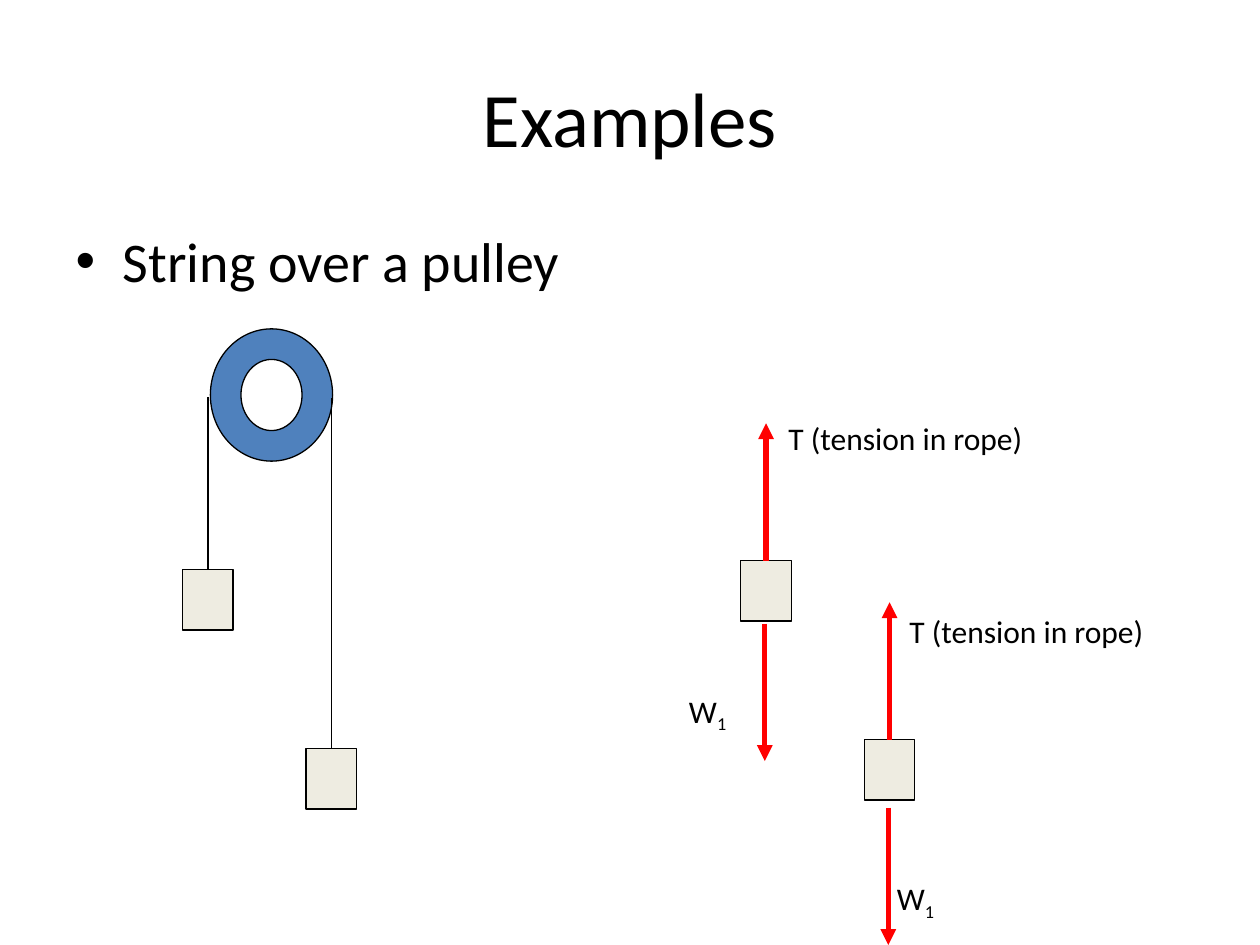
from dataclasses import dataclass

from lxml import etree
from pptx import Presentation
from pptx.dml.color import RGBColor
from pptx.enum.shapes import MSO_CONNECTOR, MSO_SHAPE
from pptx.enum.text import MSO_ANCHOR, PP_ALIGN
from pptx.oxml.ns import qn
from pptx.util import Inches, Pt

STRAIGHT = MSO_CONNECTOR.STRAIGHT
RECTANGLE, DONUT = MSO_SHAPE.RECTANGLE, MSO_SHAPE.DONUT
MIDDLE, CENTER, LEFT = MSO_ANCHOR.MIDDLE, PP_ALIGN.CENTER, PP_ALIGN.LEFT
TOP_SIDE = 0


@dataclass(frozen=True)
class Theme:
    font: str = "Calibri"
    ink: str = "000000"
    pulley: str = "4F81BD"
    weight: str = "EEECE1"
    force: str = "FF0000"
    title_size: int = 44
    body_size: int = 32
    label_size: int = 18
    thin: float = 0.75
    thick: float = 3


class SlideBuilder:
    def __init__(self, slide, theme):
        self.slide = slide
        self.theme = theme

    def style_font(self, font, size):
        values = {"name": self.theme.font, "size": Pt(size), "bold": False}
        for attribute, value in values.items():
            setattr(font, attribute, value)
        font.color.rgb = RGBColor.from_string(self.theme.ink)

    def style_line(self, line, color, width):
        line.color.rgb = RGBColor.from_string(color)
        line.width = Pt(width)

    def place(self, element, left, top, width, height):
        bounds = {"left": left, "top": top, "width": width, "height": height}
        for attribute, value in bounds.items():
            setattr(element, attribute, Inches(value))

    def placeholder(self, element, text, bounds, size, align):
        self.place(element, *bounds)
        element.text_frame.text = text
        paragraph = element.text_frame.paragraphs[0]
        paragraph.alignment = align
        paragraph.space_before = Pt(0)
        self.style_font(paragraph.runs[0].font, size)

    def title(self, text, bounds):
        element = self.slide.shapes.title
        self.placeholder(element, text, bounds, self.theme.title_size, CENTER)
        element.text_frame.vertical_anchor = MIDDLE

    def body(self, text, bounds):
        element = self.slide.placeholders[1]
        self.placeholder(element, text, bounds, self.theme.body_size, LEFT)

    def shape(self, kind, bounds, fill):
        element = self.slide.shapes.add_shape(kind, *map(Inches, bounds))
        element.shadow.inherit = False
        element.fill.solid()
        element.fill.fore_color.rgb = RGBColor.from_string(fill)
        self.style_line(element.line, self.theme.ink, self.theme.thin)
        return element

    def line(self, x, start, end, color, width):
        """Draw a vertical line at x."""
        connector = self.slide.shapes.add_connector(
            STRAIGHT, Inches(x), Inches(start), Inches(x), Inches(end))
        self.style_line(connector.line, color, width)
        etree.SubElement(connector._element.spPr, qn("a:effectLst"))
        return connector

    def rope(self, x, start, end):
        return self.line(x, start, end, self.theme.ink, self.theme.thin)

    def force(self, x, start, end):
        """Draw a vertical arrow with its head at end."""
        arrow = self.line(x, start, end, self.theme.force, self.theme.thick)
        etree.SubElement(arrow.line._get_or_add_ln(), qn("a:tailEnd"), type="triangle")
        return arrow

    def label(self, left, top, width, text, subscript=""):
        box = self.slide.shapes.add_textbox(*map(Inches, (left, top, width, 0.4)))
        box.text_frame.word_wrap = True
        paragraph = box.text_frame.paragraphs[0]
        for part in filter(None, (text, subscript)):
            run = paragraph.add_run()
            run.text = part
            self.style_font(run.font, self.theme.label_size)
        if subscript:
            run.font._element.set("baseline", "-25000")


def main():
    presentation = Presentation()
    presentation.slide_width, presentation.slide_height = Inches(10), Inches(7.5)
    slide = presentation.slides.add_slide(presentation.slide_layouts[1])
    theme = Theme()
    builder = SlideBuilder(slide, theme)

    builder.title("Examples", (0.5, 0.3, 9, 1.25))
    builder.body("String over a pulley", (0.5, 1.75, 9, 4.95))
    builder.shape(DONUT, (1.67, 2.61, 0.97, 1.05), theme.pulley)

    weight_width, weight_height = 0.4, 0.48

    def add_weight(center, top):
        bounds = (center - weight_width / 2, top, weight_width, weight_height)
        return builder.shape(RECTANGLE, bounds, theme.weight)

    # Hanging weights: centre, rope top, weight top
    for center, rope_top, weight_top in ((1.65, 3.15, 4.52), (2.63, 3.16, 5.94)):
        weight = add_weight(center, weight_top)
        rope = builder.rope(center, rope_top, weight_top)
        rope.end_connect(weight, TOP_SIDE)

    # Free-body diagrams: centre, weight top, gravity start, label corners
    force_length = 1.09
    diagrams = (
        (6.08, 4.45, 4.95, (6.16, 3.28), (5.37, 5.44)),
        (7.06, 5.87, 6.41, (7.12, 4.81), (7.02, 6.93)),
    )
    for center, top, gravity_start, tension_label, gravity_label in diagrams:
        weight = add_weight(center, top)
        tension = builder.force(center, top, top - force_length)
        tension.begin_connect(weight, TOP_SIDE)
        builder.force(center - 0.01, gravity_start, gravity_start + force_length)
        builder.label(*tension_label, 2.66, "T (tension in rope)")
        builder.label(*gravity_label, 0.6, "W", subscript="1")

    presentation.save("out.pptx")


if __name__ == "__main__":
    main()
